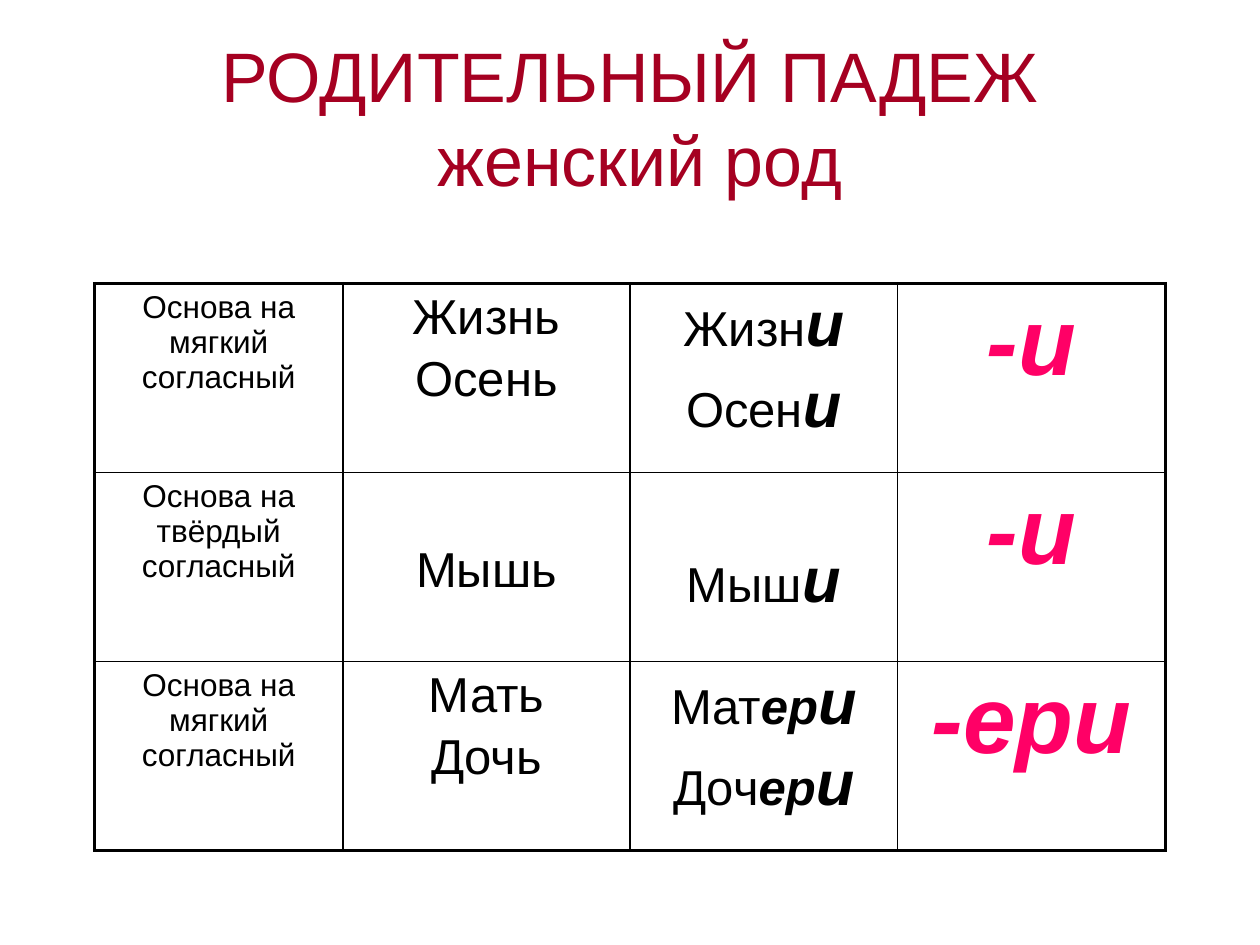
from lxml import etree
from pptx import Presentation
from pptx.dml.color import RGBColor
from pptx.enum.text import MSO_ANCHOR, MSO_AUTO_SIZE, PP_ALIGN
from pptx.oxml.ns import qn
from pptx.util import Pt

CENTER = PP_ALIGN.CENTER
MIDDLE = MSO_ANCHOR.MIDDLE
NO_AUTOFIT = MSO_AUTO_SIZE.NONE

FONT = "Arial"
COLORS = {"title": "A50021", "text": "000000", "ending": "FF0066", "border": "000000"}
TITLE_ONLY = 5
LABEL, WORD, SUFFIX, ENDING = 18, 28, 36, 54
OUTER, INNER = 2.25, 1
TOP_MARGIN = 3.6
COLUMN_WIDTHS = [142, 164, 153, 153]
ROW_HEIGHT = 108


def add_text(paragraph, text, size=WORD, color="text", strong=False):
    run = paragraph.add_run()
    run.text = text
    run.font.name = FONT
    run.font.size = Pt(size)
    run.font.bold = run.font.italic = strong
    run.font.color.rgb = RGBColor.from_string(COLORS[color])


def label(text):
    return [[(text, {"size": LABEL})]]


def words(*items):
    return [[(item, {})] for item in items]


def genitive(stem, infix=""):
    runs = [(stem, {})]
    if infix:
        runs.append((infix, {"strong": True}))
    return runs + [("и", {"size": SUFFIX, "strong": True})]


def ending(text):
    return [[(text, {"size": ENDING, "color": "ending", "strong": True})]]


class SlideBuilder:
    def __init__(self, presentation):
        self.slide = presentation.slides.add_slide(presentation.slide_layouts[TITLE_ONLY])

    def title(self, lines, left, top, width, height):
        shape = self.slide.shapes.title
        shape.left, shape.top, shape.width, shape.height = map(Pt, (left, top, width, height))
        frame = shape.text_frame
        frame.auto_size = NO_AUTOFIT
        frame.vertical_anchor = MIDDLE
        paragraph = frame.paragraphs[0]
        paragraph.alignment = CENTER
        for index, line in enumerate(lines):
            if index:
                paragraph.add_line_break()
            add_text(paragraph, line, size=40, color="title")

    def table(self, rows, left, top):
        frame = self.slide.shapes.add_table(
            len(rows), len(COLUMN_WIDTHS), Pt(left), Pt(top),
            Pt(sum(COLUMN_WIDTHS)), Pt(ROW_HEIGHT * len(rows)))
        table = frame.table
        table.first_row = table.horz_banding = False
        for column, width in zip(table.columns, COLUMN_WIDTHS):
            column.width = Pt(width)
        last_row, last_column = len(rows) - 1, len(COLUMN_WIDTHS) - 1
        for row_index, contents in enumerate(rows):
            table.rows[row_index].height = Pt(ROW_HEIGHT)
            for column_index, (paragraphs, offset) in enumerate(contents):
                cell = table.cell(row_index, column_index)
                self.fill_cell(cell, paragraphs, offset)
                self.cell_borders(cell, {
                    "a:lnL": column_index == 0,
                    "a:lnR": column_index == last_column,
                    "a:lnT": row_index == 0,
                    "a:lnB": row_index == last_row,
                })

    def fill_cell(self, cell, paragraphs, offset):
        cell.fill.background()
        cell.margin_top = Pt(TOP_MARGIN + offset)
        frame = cell.text_frame
        for index, runs in enumerate(paragraphs):
            paragraph = frame.add_paragraph() if index else frame.paragraphs[0]
            paragraph.alignment = CENTER
            if index:
                largest = max(style.get("size", WORD) for _, style in runs)
                paragraph.space_before = Pt(round(largest * 0.16, 1))
            for text, style in runs:
                add_text(paragraph, text, **style)

    def cell_borders(self, cell, edges):
        properties = cell._tc.get_or_add_tcPr()
        for position, (tag, is_outer) in enumerate(edges.items()):
            line = etree.Element(qn(tag), w=str(Pt(OUTER if is_outer else INNER)))
            fill = etree.SubElement(line, qn("a:solidFill"))
            etree.SubElement(fill, qn("a:srgbClr"), val=COLORS["border"])
            properties.insert(position, line)


def main():
    presentation = Presentation()
    presentation.slide_width, presentation.slide_height = Pt(720), Pt(540)
    builder = SlideBuilder(presentation)
    builder.title(["РОДИТЕЛЬНЫЙ ПАДЕЖ", " женский род"], 36, 21.6, 648, 90)
    soft = label("Основа на мягкий согласный")
    hard = label("Основа на твёрдый согласный")
    rows = [
        [(soft, 0), (words("Жизнь", "Осень"), 0),
         ([genitive("Жизн"), genitive("Осен")], 0), (ending("-и"), 0)],
        [(hard, 0), (words("Мышь"), 36.6),
         ([genitive("Мыш")], 38.2), (ending("-и"), 0)],
        [(soft, 0), (words("Мать", "Дочь"), 0),
         ([genitive("Мат", "ер"), genitive("Доч", "ер")], 0), (ending("-ери"), 0)],
    ]
    builder.table(rows, 54, 162)
    presentation.save("out.pptx")


if __name__ == "__main__":
    main()
